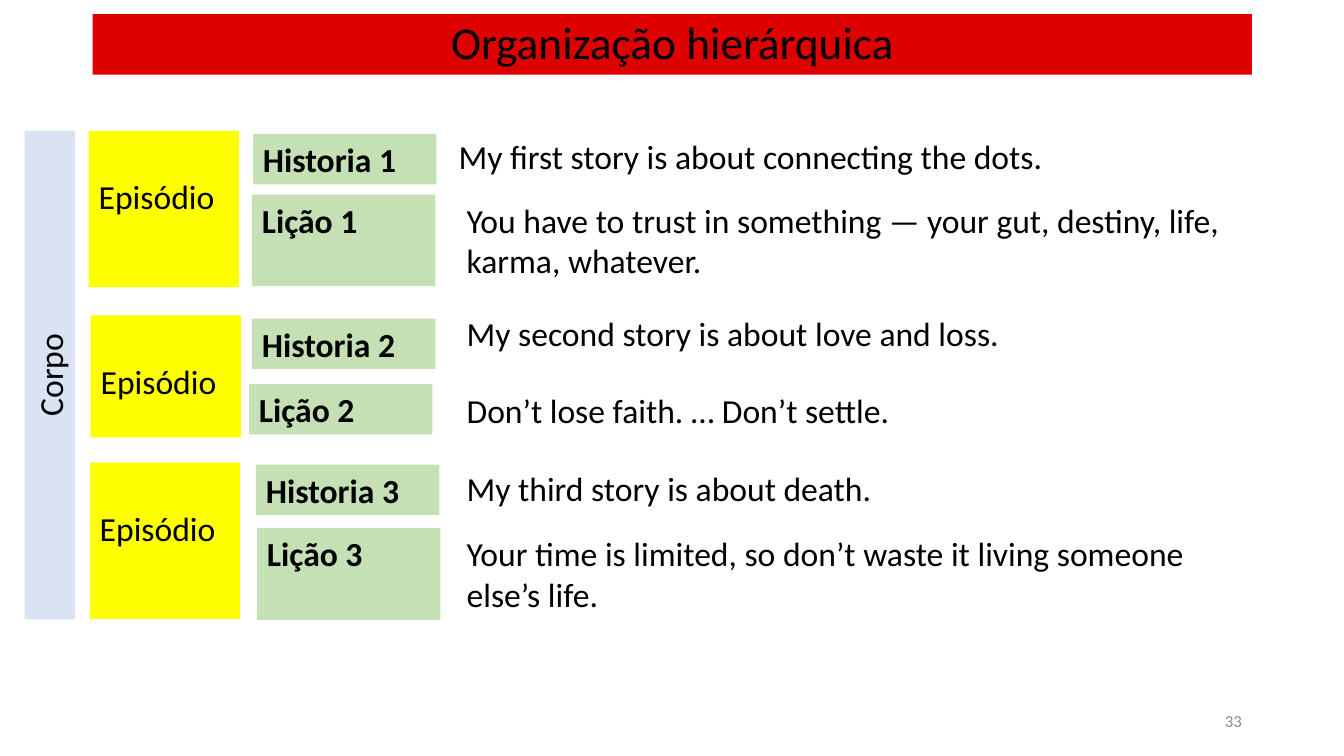
import pptx
import pptx.util
import pptx.dml.color
import pptx.enum.shapes
import pptx.enum.text

RGBColor = pptx.dml.color.RGBColor
Align = pptx.enum.text.PP_ALIGN
Anchor = pptx.enum.text.MSO_ANCHOR
Inches = pptx.util.Inches

BLACK = RGBColor(0x00, 0x00, 0x00)
GRAY = RGBColor(0x8C, 0x8C, 0x8C)
RED = RGBColor(0xDE, 0x00, 0x00)
YELLOW = RGBColor(0xFF, 0xFF, 0x00)
GREEN = RGBColor(0xC5, 0xE0, 0xB4)
BLUE = RGBColor(0xDA, 0xE3, 0xF3)

FONT = "Calibri"
SLIDE_WIDTH = Inches(13.33)
SLIDE_HEIGHT = Inches(7.5)
LINE = 6.67
TWO_LINES = 12.13
EPISODE_WIDTH = 11.18
LABEL_WIDTH = 13.65
TEXT_INSET = Inches(0.05)
EPISODE_INSET = Inches(0.45)

EPISODES = [
    (6.6, 17.33, 20.67),
    (6.75, 41.73, 16.13),
    (6.68, 61.2, 20.67),
]

LABELS = [
    ("Historia 1", 18.83, 17.73, LINE),
    ("Lição 1", 18.75, 25.73, TWO_LINES),
    ("Historia 2", 18.75, 42.13, LINE),
    ("Lição 2", 18.53, 50.8, LINE),
    ("Historia 3", 19.05, 61.47, LINE),
    ("Lição 3", 19.13, 69.87, TWO_LINES),
]

SENTENCES = [
    ("My first story is about connecting the dots.", 33.38, 17.33, 59.18, LINE),
    ("You have to trust in something — your gut, destiny, life, karma, whatever.",
     33.98, 25.73, 59.18, TWO_LINES),
    ("My second story is about love and loss.", 33.98, 40.67, 54.98, LINE),
    ("Don’t lose faith. … Don’t settle.", 33.98, 50.93, 57.53, LINE),
    ("My third story is about death.", 33.98, 61.2, 59.18, LINE),
    ("Your time is limited, so don’t waste it living someone else’s life.",
     33.98, 69.87, 59.18, TWO_LINES),
]


def frame(left, top, width, height):
    return (round(SLIDE_WIDTH * left / 100), round(SLIDE_HEIGHT * top / 100),
            round(SLIDE_WIDTH * width / 100), round(SLIDE_HEIGHT * height / 100))


def write(shape, text, size=24, color=BLACK, bold=False, align=Align.LEFT,
          anchor=Anchor.TOP, inset=TEXT_INSET):
    body = shape.text_frame
    body.word_wrap = True
    body.auto_size = pptx.enum.text.MSO_AUTO_SIZE.NONE
    body.vertical_anchor = anchor
    body.margin_top = inset
    para = body.paragraphs[0]
    para.alignment = align
    span = para.add_run()
    span.text = text
    span.font.name = FONT
    span.font.size = pptx.util.Pt(size)
    span.font.bold = bold
    span.font.color.rgb = color
    return para


def paint(shape, color):
    shape.fill.solid()
    shape.fill.fore_color.rgb = color
    shape.line.fill.background()


def add_title(page, text):
    title = page.shapes.title
    title.left, title.top, title.width, title.height = frame(6.9, 1.87, 86.25, 8)
    paint(title, RED)
    para = write(title, text, size=32.4, align=Align.CENTER, anchor=Anchor.MIDDLE)
    para.line_spacing = 0.9


def add_block(page, text, place, color, **style):
    block = page.shapes.add_shape(
        pptx.enum.shapes.MSO_SHAPE.RECTANGLE, *frame(*place))
    block.shadow.inherit = False
    paint(block, color)
    write(block, text, **style)
    return block


def add_text(page, text, place, **style):
    write(page.shapes.add_textbox(*frame(*place)), text, **style)


def main():
    deck = pptx.Presentation()
    deck.slide_width = SLIDE_WIDTH
    deck.slide_height = SLIDE_HEIGHT
    page = deck.slides.add_slide(deck.slide_layouts.get_by_name("Title Only"))

    add_title(page, "Organização hierárquica")
    body_bar = add_block(page, "Corpo", (-14.48, 46.27, 36.38, LINE), BLUE,
                         align=Align.CENTER)
    body_bar.rotation = 270
    for left, top, height in EPISODES:
        add_block(page, "Episódio", (left, top, EPISODE_WIDTH, height), YELLOW,
                  inset=EPISODE_INSET)
    for text, left, top, height in LABELS:
        add_block(page, text, (left, top, LABEL_WIDTH, height), GREEN, bold=True)
    for text, *place in SENTENCES:
        add_text(page, text, place)
    add_text(page, "33", (70.65, 92.67, 22.5, 5.33), size=12, color=GRAY,
             align=Align.RIGHT, anchor=Anchor.MIDDLE)

    deck.save("out.pptx")


if __name__ == "__main__":
    main()
